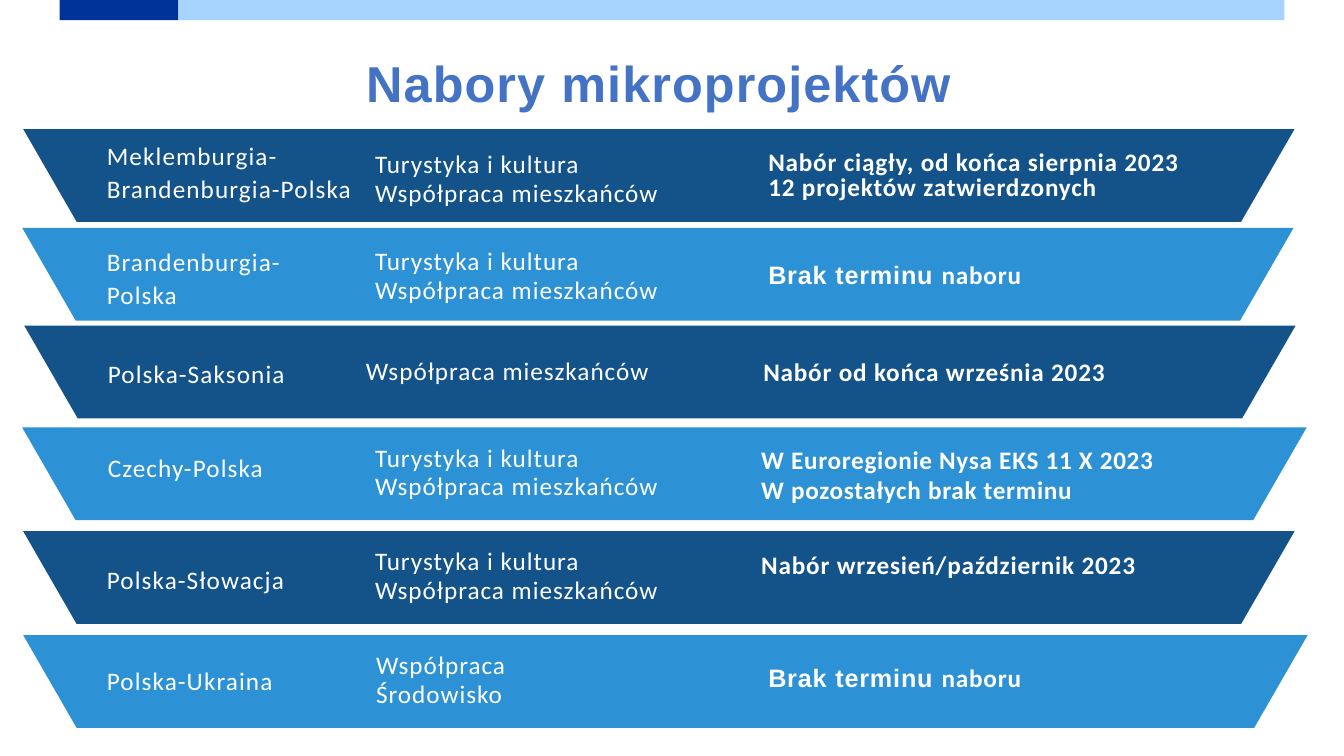
from dataclasses import dataclass

from pptx import Presentation
from pptx.dml.color import RGBColor
from pptx.enum import shapes, text
from pptx.util import Inches, Pt

WHITE = RGBColor(0xFF, 0xFF, 0xFF)
NAVY = RGBColor(0x00, 0x33, 0x99)
PALE_BLUE = RGBColor(0xA6, 0xD3, 0xFF)
DARK_BLUE = RGBColor(0x13, 0x53, 0x8A)
MID_BLUE = RGBColor(0x2C, 0x92, 0xD5)
TITLE_BLUE = RGBColor(0x44, 0x72, 0xC4)

BAND_HEIGHT = 0.92
BAND_SLANT = 0.53


@dataclass
class Style:
    line_pt: float | None
    tracking: float
    bold: bool = False


@dataclass
class Label:
    left: float
    top: float
    width: float
    height: float
    text: str
    lead: str = ""


@dataclass
class Band:
    left: float
    top: float
    width: float
    programme: Label
    topics: Label
    call: Label


PROGRAMME = Style(23.3, 0.8)
TOPICS = Style(20.5, 0.7)
CALL = Style(17.7, 0.6, bold=True)
LOOSE_CALL = Style(None, 0.5, bold=True)

CULTURE = "Turystyka i kultura\nWspółpraca mieszkańców"

BANDS = [
    Band(0.23, 1.28, 12.61,
         Label(1.06, 1.37, 2.57, 0.63, "Meklemburgia-\nBrandenburgia-Polska"),
         Label(3.72, 1.49, 3.09, 0.59, CULTURE),
         Label(7.62, 1.51, 4.63, 0.51,
               "Nabór ciągły, od końca sierpnia 2023\v12 projektów zatwierdzonych")),
    Band(0.22, 2.26, 12.61,
         Label(1.06, 2.42, 1.96, 0.63, "Brandenburgia-\nPolska"),
         Label(3.72, 2.45, 3.09, 0.59, CULTURE),
         Label(7.62, 2.63, 2.96, 0.26, "naboru", lead="Brak terminu ")),
    Band(0.24, 3.23, 12.61,
         Label(1.07, 3.53, 1.93, 0.31, "Polska-Saksonia"),
         Label(3.63, 3.54, 3.09, 0.29, "Współpraca mieszkańców"),
         Label(7.57, 3.59, 4.69, 0.26, "Nabór od końca września 2023")),
    Band(0.22, 4.24, 12.74,
         Label(1.07, 4.46, 1.7, 0.31, "Czechy-Polska"),
         Label(3.72, 4.4, 3.09, 0.59, CULTURE),
         Label(7.55, 4.41, 4.87, 0.61,
               "W Euroregionie Nysa EKS 11 X 2023\vW pozostałych brak terminu")),
    Band(0.23, 5.27, 12.61,
         Label(1.06, 5.57, 1.89, 0.31, "Polska-Słowacja"),
         Label(3.72, 5.43, 3.09, 0.59, CULTURE),
         Label(7.55, 5.5, 4.62, 0.26, "Nabór wrzesień/październik 2023")),
    Band(0.23, 6.3, 12.74,
         Label(1.06, 6.58, 1.89, 0.31, "Polska-Ukraina"),
         Label(3.73, 6.46, 2.98, 0.59, "Współpraca\nŚrodowisko"),
         Label(7.62, 6.63, 2.96, 0.26, "naboru", lead="Brak terminu ")),
]


def place(sp, left: float, top: float, width: float, height: float) -> None:
    sp.left, sp.top = Inches(left), Inches(top)
    sp.width, sp.height = Inches(width), Inches(height)


def paint(sp, color: RGBColor) -> None:
    sp.fill.solid()
    sp.fill.fore_color.rgb = color
    sp.line.fill.background()
    sp.shadow.inherit = False


def write(tf, content: str, *, style: Style, lead: str = "", font: str = "Calibri",
          size: float = 18, color: RGBColor = WHITE,
          align=text.PP_ALIGN.LEFT) -> None:
    """Fill a frame: \\n starts a paragraph, \\v breaks a line, lead is in Arial."""
    tf.word_wrap = True
    tf.auto_size = text.MSO_AUTO_SIZE.SHAPE_TO_FIT_TEXT
    tf.vertical_anchor = text.MSO_ANCHOR.TOP
    tf.margin_left = tf.margin_right = tf.margin_top = tf.margin_bottom = 0
    for i, paragraph in enumerate(content.split("\n")):
        p = tf.paragraphs[0] if i == 0 else tf.add_paragraph()
        p.alignment = align
        if style.line_pt:
            p.line_spacing = Pt(style.line_pt)
        pieces = [(lead, "Arial")] if lead and i == 0 else []
        for j, line in enumerate(paragraph.split("\v")):
            if j:
                pieces.append(("\v", font))
            pieces.append((line, font))
        for piece, name in pieces:
            if piece == "\v":
                p.add_line_break()
                continue
            r = p.add_run()
            r.text = piece
            r.font.name, r.font.size = name, Pt(size)
            r.font.bold = style.bold
            r.font.color.rgb = color
            r._r.get_or_add_rPr().set("spc", str(round(style.tracking * 100)))


def add_label(s, label: Label, style: Style) -> None:
    sp = s.shapes.add_textbox(0, 0, 0, 0)
    place(sp, label.left, label.top, label.width, label.height)
    write(sp.text_frame, label.text, style=style, lead=label.lead)


def add_bar(s, left: float, width: float, color: RGBColor) -> None:
    sp = s.shapes.add_shape(shapes.MSO_SHAPE.RECTANGLE, 0, 0, 0, 0)
    place(sp, left, 0, width, 0.2)
    paint(sp, color)


def add_band(s, band: Band, color: RGBColor) -> None:
    right, bottom = band.left + band.width, band.top + BAND_HEIGHT
    outline = s.shapes.build_freeform(Inches(band.left), Inches(band.top))
    outline.add_line_segments([
        (Inches(right), Inches(band.top)),
        (Inches(right - BAND_SLANT), Inches(bottom)),
        (Inches(band.left + BAND_SLANT), Inches(bottom)),
    ], close=True)
    paint(outline.convert_to_shape(), color)
    add_label(s, band.programme, PROGRAMME)
    add_label(s, band.topics, TOPICS)
    add_label(s, band.call, LOOSE_CALL if "Nysa" in band.call.text else CALL)


def main() -> None:
    prs = Presentation()
    prs.slide_width, prs.slide_height = Inches(13.33), Inches(7.5)
    s = prs.slides.add_slide(prs.slide_layouts.get_by_name("Title Only"))
    add_bar(s, 0.59, 1.18, NAVY)
    add_bar(s, 1.77, 10.97, PALE_BLUE)
    title = s.shapes.title
    place(title, 3.3, 0.63, 6.47, 0.5)
    write(title.text_frame, "Nabory mikroprojektów", style=Style(34.9, 0.8, bold=True),
          font="Arial", size=36, color=TITLE_BLUE, align=text.PP_ALIGN.CENTER)
    for i, band in enumerate(BANDS):
        add_band(s, band, MID_BLUE if i % 2 else DARK_BLUE)
    prs.save("out.pptx")


if __name__ == "__main__":
    main()
